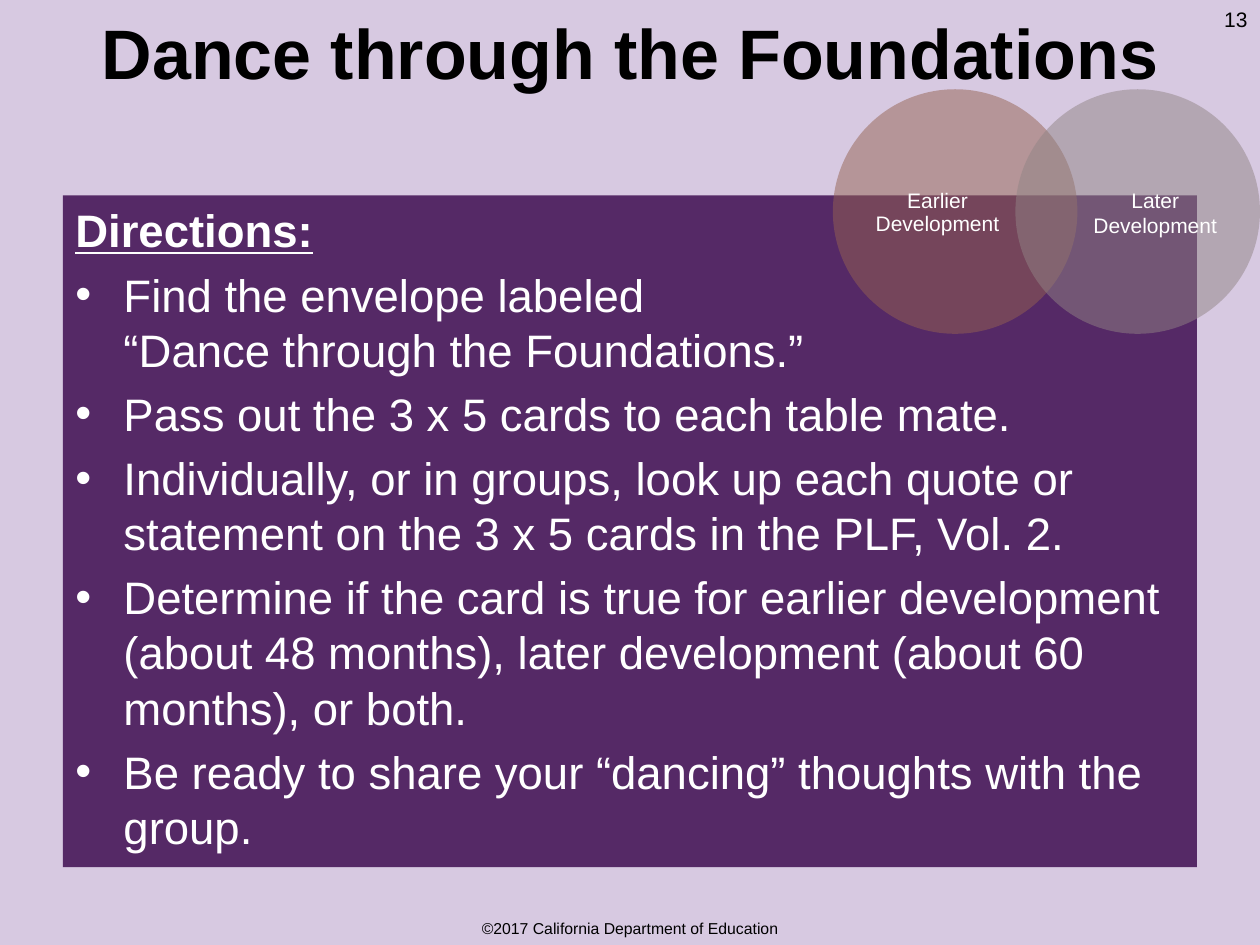
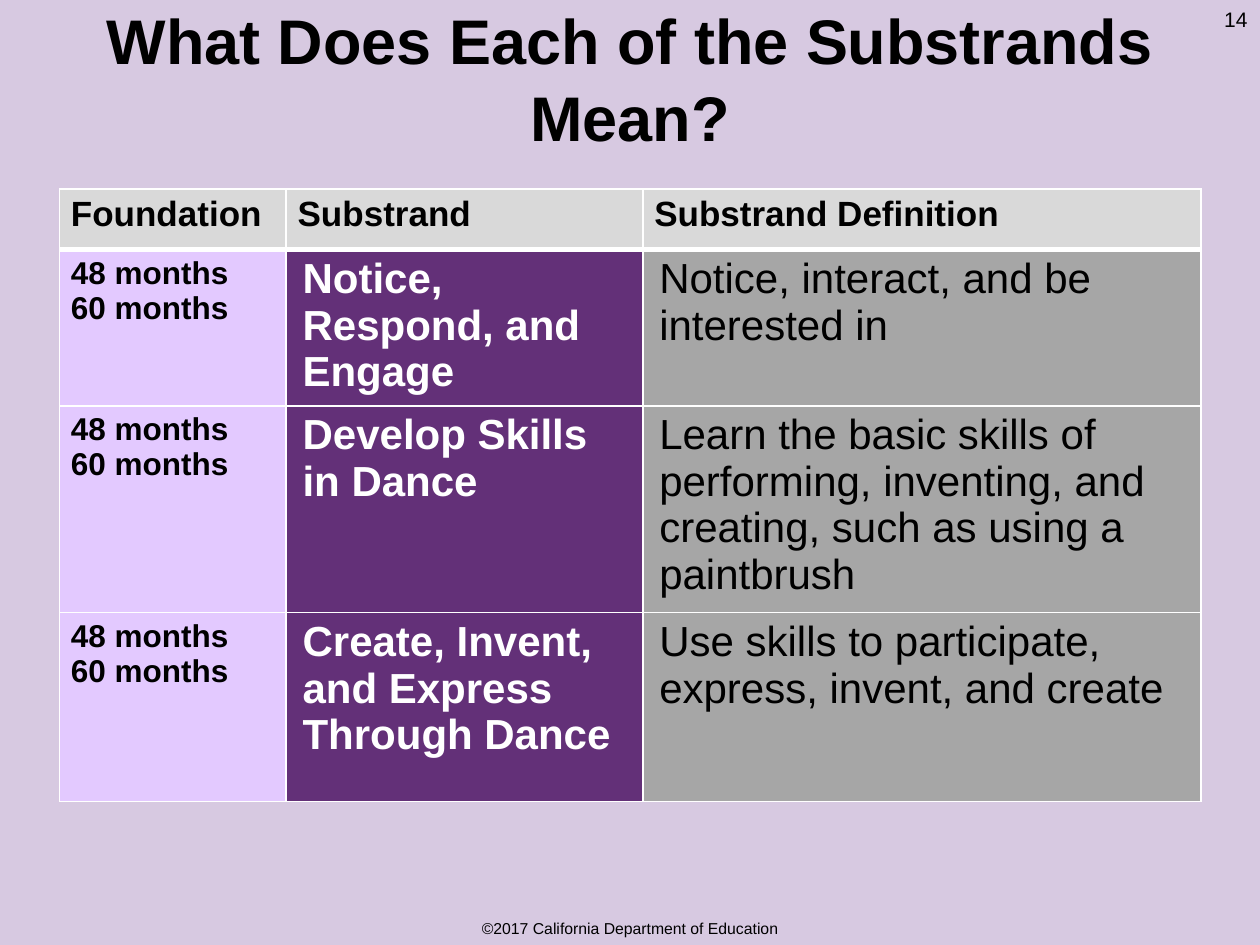
from dataclasses import dataclass

from lxml.etree import SubElement
from pptx import Presentation
from pptx.dml.color import RGBColor
from pptx.enum.shapes import MSO_SHAPE
from pptx.enum.text import MSO_ANCHOR, PP_ALIGN
from pptx.oxml.ns import qn
from pptx.util import Cm, Pt


@dataclass(frozen=True)
class Theme:
    font: str = "Arial"
    # Colours
    background: str = "D7C9E1"
    ink: str = "000000"
    white: str = "FFFFFF"
    panel: str = "552966"
    earlier: str = "956251"
    later: str = "918485"
    header: str = "D9D9D9"
    foundation: str = "E3C9FF"
    substrand: str = "633078"
    definition: str = "A6A6A6"
    # Type sizes in points
    title_size: int = 40
    long_title_size: int = 36
    body_size: int = 26
    label_size: int = 12
    footer_size: int = 9
    header_size: int = 20
    months_size: int = 18
    cell_size: int = 24
    # Line height as a share of the type size
    leading: float = 1.21
    tight_leading: float = 1.11


FOOTER = "©2017 California Department of Education"
PAGE_WIDTH, PAGE_HEIGHT = 25.4, 19.05
INSET_X, INSET_Y = 0.25, 0.13


class SlideBuilder:
    """Holds the style and the current slide; lengths are in centimetres."""

    def __init__(self, deck, theme):
        self.deck = deck
        self.theme = theme
        self.page = None

    def new_page(self, number):
        self.page = self.deck.slides.add_slide(self.deck.slide_layouts[6])
        fill = self.page.background.fill
        fill.solid()
        fill.fore_color.rgb = RGBColor.from_string(self.theme.background)
        self.text(FOOTER, (0, 18.39, PAGE_WIDTH, 0.66), self.theme.footer_size)
        self.text(number, (24.13, 0, 1.27, 1.02), self.theme.label_size,
                  align=PP_ALIGN.RIGHT, anchor=MSO_ANCHOR.TOP)

    def style(self, para, size, color, bold=False, leading=None, align=PP_ALIGN.LEFT):
        para.alignment = align
        para.line_spacing = Pt(round(size * (leading or self.theme.leading), 1))
        for span in para.runs:
            span.font.name = self.theme.font
            span.font.size = Pt(size)
            span.font.bold = bold
            span.font.color.rgb = RGBColor.from_string(color)

    def frame(self, holder, anchor, inset=(INSET_X, INSET_Y)):
        frame = holder.text_frame
        frame.word_wrap = True
        frame.vertical_anchor = anchor
        frame.margin_left = frame.margin_right = Cm(inset[0])
        frame.margin_top = frame.margin_bottom = Cm(inset[1])
        return frame

    def text(self, words, place, size, color=None, bold=False, leading=None,
             align=PP_ALIGN.CENTER, anchor=MSO_ANCHOR.MIDDLE, inset=(INSET_X, INSET_Y)):
        box = self.page.shapes.add_textbox(*map(Cm, place))
        frame = self.frame(box, anchor, inset)
        frame.text = words
        self.style(frame.paragraphs[0], size, color or self.theme.ink, bold, leading, align)

    def title(self, words, place, size):
        self.text(words, place, size, bold=True)

    def shape(self, preset, place, color, opacity=100):
        shape = self.page.shapes.add_shape(preset, *map(Cm, place))
        shape.shadow.inherit = False
        shape.line.fill.background()
        shape.fill.solid()
        shape.fill.fore_color.rgb = RGBColor.from_string(color)
        if opacity < 100:
            tint = shape.fill._xPr.find(f"{qn('a:solidFill')}/{qn('a:srgbClr')}")
            SubElement(tint, qn("a:alpha"), val=str(opacity * 1000))
        return shape

    def directions(self, heading, steps, place):
        theme = self.theme
        panel = self.shape(MSO_SHAPE.RECTANGLE, place, theme.panel)
        frame = self.frame(panel, MSO_ANCHOR.TOP)
        for index, words in enumerate([heading, *steps]):
            para = frame.add_paragraph() if index else frame.paragraphs[0]
            para.text = words
            hanging = Cm(0.97)
            properties = para._p.get_or_add_pPr()
            properties.set("marL", str(hanging))
            properties.set("indent", str(-hanging))
            if index:
                SubElement(properties, qn("a:buFont"), typeface=theme.font)
                SubElement(properties, qn("a:buChar"), char="•")
                para.space_before = Pt(5.2)
            self.style(para, theme.body_size, theme.white, bold=index == 0)
        frame.paragraphs[0].runs[0].font.underline = True

    def circle(self, words, left, label_left, color, leading):
        theme = self.theme
        self.shape(MSO_SHAPE.OVAL, (left, 1.8, 4.93, 4.93), color, opacity=50)
        self.text(words, (label_left, 2.39, 2.84, 3.78), theme.label_size,
                  theme.white, leading=leading, inset=(0, 0))

    def borders(self, cell, widths):
        properties = cell._tc.get_or_add_tcPr()
        for side, width in zip("LRTB", widths):
            line = SubElement(properties, qn(f"a:ln{side}"), w=str(Pt(width)))
            fill = SubElement(line, qn("a:solidFill"))
            SubElement(fill, qn("a:srgbClr"), val=self.theme.white)

    def cell(self, cell, words, fill, size, color, bold, inset_x, widths):
        self.borders(cell, widths)
        cell.fill.solid()
        cell.fill.fore_color.rgb = RGBColor.from_string(fill)
        cell.margin_left = cell.margin_right = Cm(inset_x)
        cell.margin_top = cell.margin_bottom = Cm(INSET_Y)
        cell.text_frame.text = words
        for para in cell.text_frame.paragraphs:
            self.style(para, size, color, bold, self.theme.tight_leading)

    def table(self, rows, left, top, widths, heights):
        theme = self.theme
        table = self.page.shapes.add_table(
            len(rows), len(widths), Cm(left), Cm(top),
            Cm(sum(widths)), Cm(sum(heights))).table
        table.horz_banding = False
        for column, width in zip(table.columns, widths):
            column.width = Cm(width)
        for row, height in zip(table.rows, heights):
            row.height = Cm(height)
        # Fill, size, text colour, bold and side inset of each column
        header = (theme.header, theme.header_size, theme.ink, True, 0.23)
        columns = [
            (theme.foundation, theme.months_size, theme.ink, True, 0.23),
            (theme.substrand, theme.cell_size, theme.white, True, 0.33),
            (theme.definition, theme.cell_size, theme.ink, False, 0.33),
        ]
        for r, row in enumerate(rows):
            # Left, right, top, bottom: a heavy rule lies under the header
            lines = (1, 1, 3 if r == 1 else 1, 3 if r == 0 else 1)
            for c, words in enumerate(row):
                look = columns[c] if r else header
                self.cell(table.cell(r, c), words, *look, lines)


def main():
    deck = Presentation()
    deck.slide_width, deck.slide_height = Cm(PAGE_WIDTH), Cm(PAGE_HEIGHT)
    theme = Theme()
    builder = SlideBuilder(deck, theme)

    # Activity directions with two overlapping circles
    builder.new_page("13")
    builder.title("Dance through the Foundations", (1.27, 0.3, 22.86, 1.45), theme.title_size)
    builder.directions("Directions:", [
        "Find the envelope labeled\v“Dance through the Foundations.”",
        "Pass out the 3 x 5 cards to each table mate.",
        "Individually, or in groups, look up each quote or statement on the "
        "3 x 5 cards in the PLF, Vol. 2.",
        "Determine if the card is true for earlier development (about 48 months), "
        "later development (about 60 months), or both.",
        "Be ready to share your “dancing” thoughts with the group.",
    ], (1.27, 3.94, 22.86, 13.54))
    builder.circle("Earlier Development", 16.79, 17.48, theme.earlier, theme.tight_leading)
    builder.circle("Later Development", 20.47, 21.87, theme.later, theme.leading)

    # Substrand definitions
    builder.new_page("14")
    builder.title("What Does Each of the Substrands Mean?",
                  (0, 0, PAGE_WIDTH, 3.12), theme.long_title_size)
    months = "48 months\n60 months"
    builder.table([
        ("Foundation", "Substrand", "Substrand Definition"),
        (months, "Notice, Respond, and Engage", "Notice, interact, and be interested in"),
        (months, "Develop Skills in Dance",
         "Learn the basic skills of performing, inventing, and creating, "
         "such as using a paintbrush"),
        (months, "Create, Invent, and Express Through Dance",
         "Use skills to participate, express, invent, and create"),
    ], 1.2, 3.81, widths=(4.57, 7.19, 11.25), heights=(1.22, 3.15, 4.17, 3.81))

    deck.save("out.pptx")


if __name__ == "__main__":
    main()
